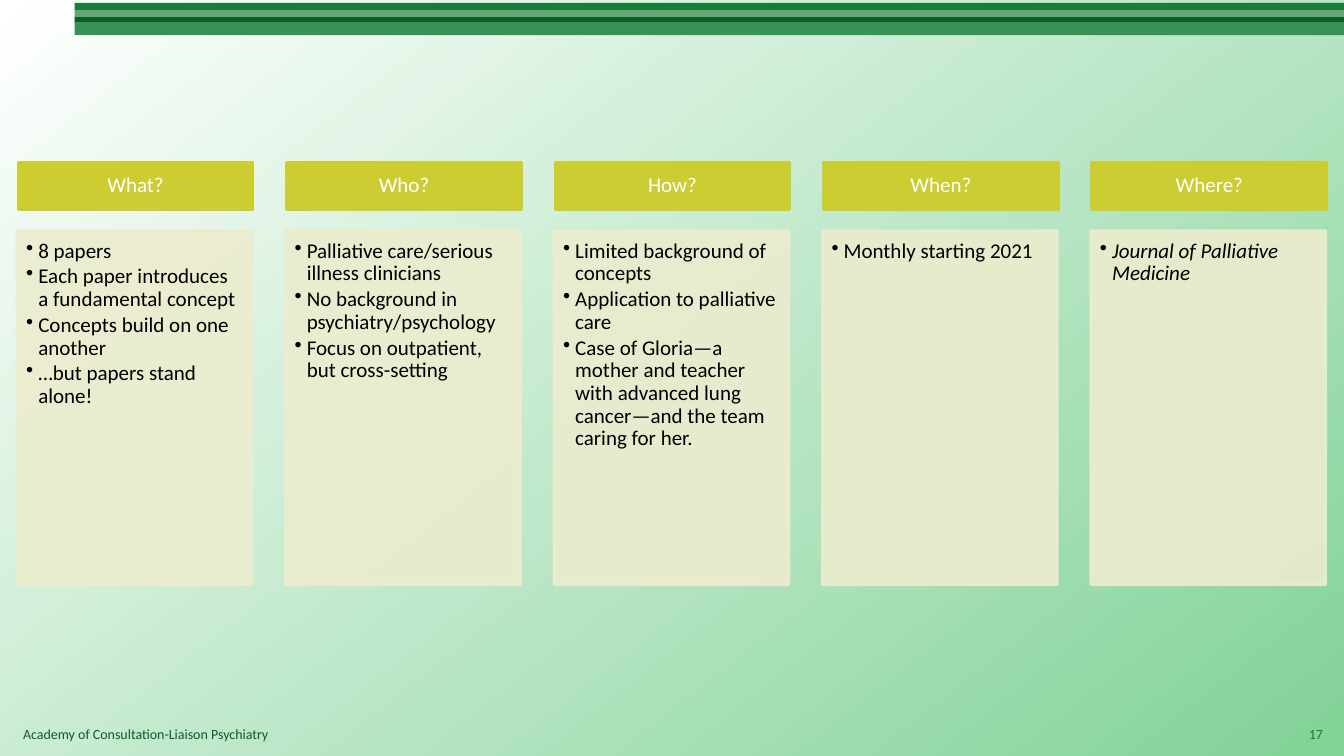
from dataclasses import dataclass

from lxml import etree
from pptx import Presentation
from pptx.dml.color import RGBColor
from pptx.enum.shapes import MSO_SHAPE
from pptx.enum.text import MSO_ANCHOR, PP_ALIGN
from pptx.oxml.ns import qn
from pptx.util import Inches, Pt

RECTANGLE = MSO_SHAPE.RECTANGLE
TOP, MIDDLE = MSO_ANCHOR.TOP, MSO_ANCHOR.MIDDLE
LEFT, CENTER, RIGHT = PP_ALIGN.LEFT, PP_ALIGN.CENTER, PP_ALIGN.RIGHT


@dataclass(frozen=True)
class Theme:
    font: str = "Calibri"
    text_size: int = 15
    footer_size: int = 10
    background: tuple = ("FFFFFF", "81D297")
    background_angle: int = 308
    bands: tuple = ("177D38", "66A677", "105A25", "389155")
    heading: str = "CCCC33"
    heading_text: str = "FFFFFF"
    panel: str = "ECECCE"
    panel_opacity: int = 90
    panel_text: str = "000000"
    footer: str = "105A25"
    number: str = "177D38"


THEME = Theme()

COLUMNS = [
    ("What?", ["8 papers", "Each paper introduces a fundamental concept",
               "Concepts build on one another", "…but papers stand alone!"], False),
    ("Who?", ["Palliative care/serious illness clinicians",
              "No background in psychiatry/psychology",
              "Focus on outpatient, but cross-setting"], False),
    ("How?", ["Limited background of concepts", "Application to palliative care",
              "Case of Gloria—a mother and teacher with advanced lung cancer"
              "—and the team caring for her."], False),
    ("When?", ["Monthly starting 2021"], False),
    ("Where?", ["Journal of Palliative Medicine"], True),
]


def apply(target, values):
    for name, value in values.items():
        setattr(target, name, value)


def set_opacity(color_format_parent, percent):
    for color in color_format_parent.iter(qn("a:srgbClr")):
        etree.SubElement(color, qn("a:alpha")).set("val", str(percent * 1000))


def add_bullet(para, indent):
    properties = para._p.get_or_add_pPr()
    properties.set("marL", str(indent))
    properties.set("indent", str(-indent))
    etree.SubElement(properties, qn("a:buChar")).set("char", "•")


def add_rectangle(page, box, color, line_width=0):
    shape = page.shapes.add_shape(RECTANGLE, *map(Inches, box))
    shape.shadow.inherit = False
    shape.fill.solid()
    shape.fill.fore_color.rgb = RGBColor.from_string(color)
    if line_width:
        shape.line.color.rgb = RGBColor.from_string(color)
        shape.line.width = Pt(line_width)
    else:
        shape.line.fill.background()
    return shape


def write(shape, texts, color, size, anchor=TOP, margins=(0.1, 0.05, 0.1, 0.05),
          bullet=False, italic=False, **para_format):
    frame = shape.text_frame
    apply(frame, {"word_wrap": True, "vertical_anchor": anchor})
    sides = ("margin_left", "margin_top", "margin_right", "margin_bottom")
    apply(frame, dict(zip(sides, map(Inches, margins))))
    for index, text in enumerate(texts):
        para = frame.add_paragraph() if index else frame.paragraphs[0]
        apply(para, para_format)
        if bullet:
            add_bullet(para, Inches(0.12))
        span = para.add_run()
        span.text = text
        apply(span.font, {"name": THEME.font, "size": Pt(size), "italic": italic})
        span.font.color.rgb = RGBColor.from_string(color)


def paint_background(page):
    fill = page.background.fill
    fill.gradient()
    fill.gradient_angle = THEME.background_angle
    for stop, color in zip(fill.gradient_stops, THEME.background):
        stop.color.rgb = RGBColor.from_string(color)


def add_bands(page, box):
    left, top, width, _ = box
    spans = ((0, 0.07), (0.07, 0.08), (0.14, 0.06), (0.19, 0.13))
    for color, (offset, height) in zip(THEME.bands, spans):
        add_rectangle(page, (left, top + offset, width, height), color)


def add_column(page, box, title, items, italic):
    left, top, width, height = box
    heading_height, panel_offset, shift = 0.47, 0.68, 0.01
    heading = add_rectangle(page, (left + shift, top, width, heading_height),
                            THEME.heading, 2)
    write(heading, [title], THEME.heading_text, THEME.text_size, MIDDLE,
          (0.12, 0.07, 0.12, 0.07), alignment=CENTER, line_spacing=0.9)
    panel = add_rectangle(page, (left, top + panel_offset, width, height - panel_offset),
                          THEME.panel, 2)
    set_opacity(panel._element.spPr, THEME.panel_opacity)
    write(panel, items, THEME.panel_text, THEME.text_size, TOP,
          (0.09, 0.09, 0.12, 0.13), bullet=True, italic=italic,
          alignment=LEFT, line_spacing=0.9, space_after=Pt(2.25))


def add_columns(page, box):
    left, top, width, height = box
    column_width = 2.33
    pitch = (width - column_width) / (len(COLUMNS) - 1)
    for index, column in enumerate(COLUMNS):
        add_column(page, (left + index * pitch, top, column_width, height), *column)


def add_footer(page, box):
    left, top, width, height = box
    number_width = 0.53
    name = page.shapes.add_textbox(*map(Inches, (left, top + 0.07, 9.25, 0.27)))
    write(name, ["Academy of Consultation-Liaison Psychiatry"],
          THEME.footer, THEME.footer_size)
    number = page.shapes.add_textbox(
        *map(Inches, (left + width - number_width, top, number_width, height)))
    write(number, ["17"], THEME.number, THEME.footer_size, MIDDLE, alignment=RIGHT)


def main():
    deck = Presentation()
    apply(deck, {"slide_width": Inches(13.33), "slide_height": Inches(7.5)})
    page = deck.slides.add_slide(deck.slide_layouts[6])
    paint_background(page)
    add_bands(page, (0.74, 0.03, 12.59, 0.32))
    add_columns(page, (0.17, 1.61, 12.98, 4.19))
    add_footer(page, (0.13, 7.08, 13.09, 0.4))
    deck.save("out.pptx")


if __name__ == "__main__":
    main()
